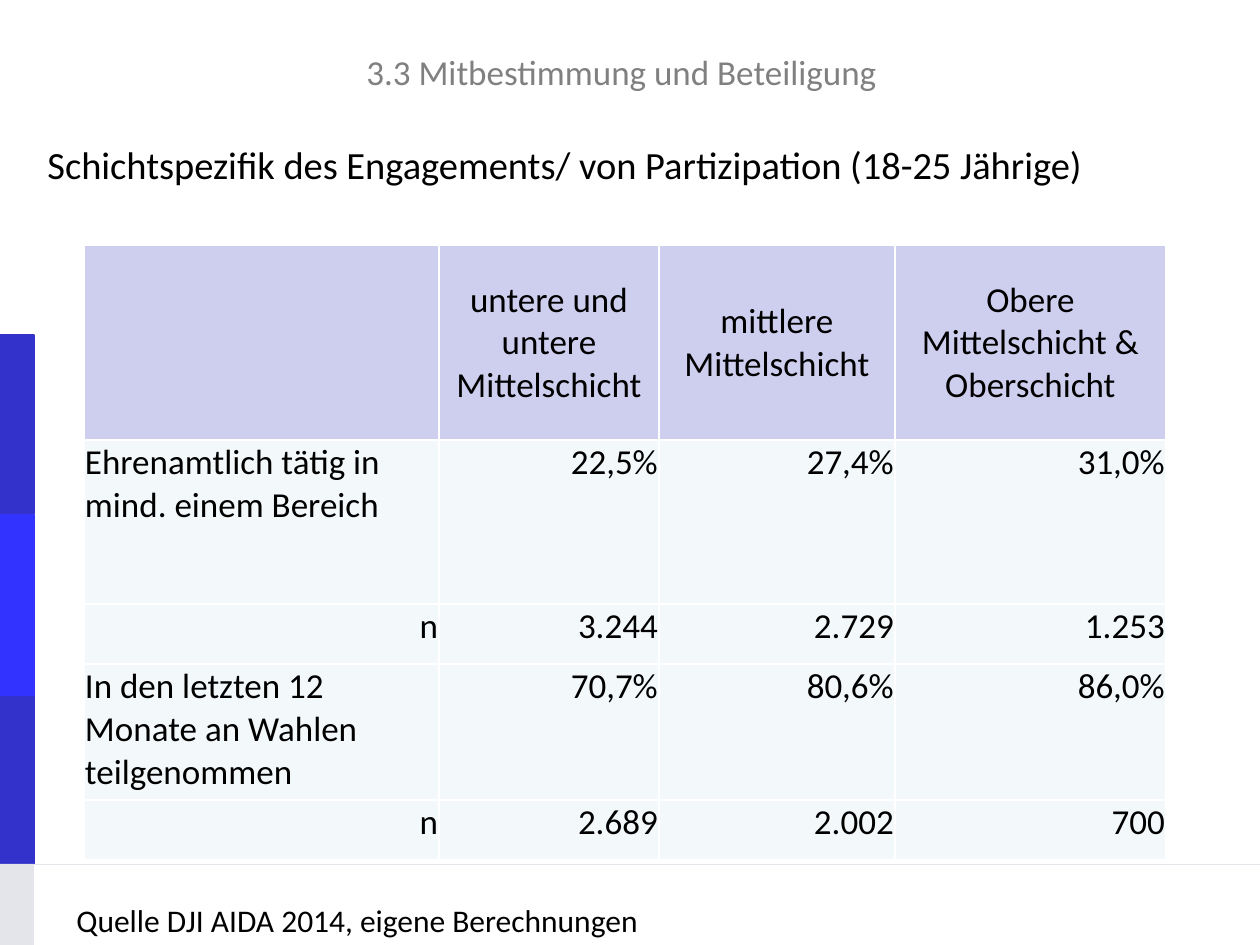
from lxml import etree
from pptx import Presentation, util as u
from pptx.dml.color import RGBColor
from pptx.enum import shapes, text
from pptx.oxml import ns

SCALE = 914400 / 126
BLACK = RGBColor(0, 0, 0)
GREY = RGBColor(0x80, 0x80, 0x80)
PALE = RGBColor(0xE4, 0xE5, 0xEA)
NAVY = RGBColor(0x33, 0x33, 0xCC)
BLUE = RGBColor(0x33, 0x33, 0xFF)
LILAC = RGBColor(0xCE, 0xCE, 0xEF)
MINT = RGBColor(0xF3, 0xF9, 0xFA)
LEFT, MID, RIGHT = text.PP_ALIGN.LEFT, text.PP_ALIGN.CENTER, text.PP_ALIGN.RIGHT
TOP, CORE = text.MSO_ANCHOR.TOP, text.MSO_ANCHOR.MIDDLE

BARS = [(335, 179, NAVY, NAVY), (694, 170, NAVY, NAVY),
        (864, 81, PALE, None), (515, 180, BLUE, BLUE)]
COLS = [355, 220, 236, 271]
ROWS = [195, 164, 60, 136, 60]
DATA = [
    ["", "untere und untere Mittelschicht", "mittlere Mittelschicht",
     "Obere Mittelschicht & Oberschicht"],
    ["Ehrenamtlich tätig in mind. einem Bereich", "22,5%", "27,4%", "31,0%"],
    ["n", "3.244", "2.729", "1.253"],
    ["In den letzten 12 Monate an Wahlen teilgenommen", "70,7%", "80,6%", "86,0%"],
    ["n", "2.689", "2.002", "700"],
]


def px(*vals):
    """Turn pixel lengths into EMU."""
    return [u.Emu(round(v * SCALE)) for v in vals]


def write(frame, words, size=20, color=BLACK, align=LEFT):
    """Put one formatted paragraph into a text frame."""
    para = frame.paragraphs[0]
    para.alignment = align
    run = para.add_run()
    run.text = words
    run.font.name = "Calibri"
    run.font.size = u.Pt(size)
    run.font.color.rgb = color


def add_bar(slide, top, high, fill, edge):
    """Draw one block of the left margin strip."""
    bar = slide.shapes.add_shape(shapes.MSO_SHAPE.RECTANGLE, *px(0, top, 34, high))
    bar.shadow.inherit = False
    bar.fill.solid()
    bar.fill.fore_color.rgb = fill
    if edge is None:
        bar.line.fill.background()
    else:
        bar.line.color.rgb = edge
        bar.line.width = u.Pt(0.75)


def add_rule(slide, y):
    """Draw the thin line above the footer."""
    rule = slide.shapes.add_connector(shapes.MSO_CONNECTOR.STRAIGHT, *px(0, y, 1260, y))
    rule.line.color.rgb = PALE
    rule.line.width = u.Pt(0.5)
    etree.SubElement(rule._element.spPr, ns.qn("a:effectLst"))


def add_text(slide, box, words, wrap=False, anchor=TOP, **style):
    """Add a text box with one paragraph."""
    frame = slide.shapes.add_textbox(*px(*box)).text_frame
    frame.word_wrap = wrap
    frame.vertical_anchor = anchor
    if not wrap:
        frame.auto_size = text.MSO_AUTO_SIZE.SHAPE_TO_FIT_TEXT
    write(frame, words, **style)


def add_edges(cell):
    """Give a cell white borders on all sides."""
    props = cell._tc.get_or_add_tcPr()
    for spot, side in enumerate(("lnL", "lnR", "lnT", "lnB")):
        edge = etree.Element(ns.qn("a:" + side), w=str(u.Pt(1)))
        fill = etree.SubElement(edge, ns.qn("a:solidFill"))
        etree.SubElement(fill, ns.qn("a:srgbClr"), val="FFFFFF")
        props.insert(spot, edge)


def fill_cell(cell, words, row, col):
    """Format and fill one table cell by its place."""
    cell.fill.solid()
    cell.fill.fore_color.rgb = MINT if row else LILAC
    cell.vertical_anchor = TOP if row else CORE
    cell.margin_left = cell.margin_right = cell.margin_top = px(1)[0]
    cell.margin_bottom = 0
    add_edges(cell)
    if words:
        label = col == 0 and words != "n"
        write(cell.text_frame, words,
              align=MID if row == 0 else LEFT if label else RIGHT)


def add_grid(slide, left, top):
    """Build the table of shares and counts."""
    size = px(left, top, sum(COLS), sum(ROWS))
    grid = slide.shapes.add_table(len(ROWS), len(COLS), *size).table
    for col, wide in zip(grid.columns, px(*COLS)):
        col.width = wide
    for row, high in zip(grid.rows, px(*ROWS)):
        row.height = high
    for r, line in enumerate(DATA):
        for c, words in enumerate(line):
            fill_cell(grid.cell(r, c), words, r, c)


def main():
    """Build and save the slide."""
    deck = Presentation()
    deck.slide_width, deck.slide_height = px(1260, 945)
    slide = deck.slides.add_slide(deck.slide_layouts[6])
    for bar in BARS:
        add_bar(slide, *bar)
    add_rule(slide, 864)
    add_text(slide, (35, 37, 1181, 69), "3.3 Mitbestimmung und Beteiligung ",
             wrap=True, anchor=CORE, color=GREY, align=MID)
    add_text(slide, (35, 135, 1063, 59),
             "Schichtspezifik des Engagements/ von Partizipation (18-25 Jährige)", size=22)
    add_grid(slide, 84, 245)
    add_text(slide, (64, 895, 595, 50), "Quelle DJI AIDA 2014, eigene Berechnungen", size=18)
    deck.save("out.pptx")


if __name__ == "__main__":
    main()
